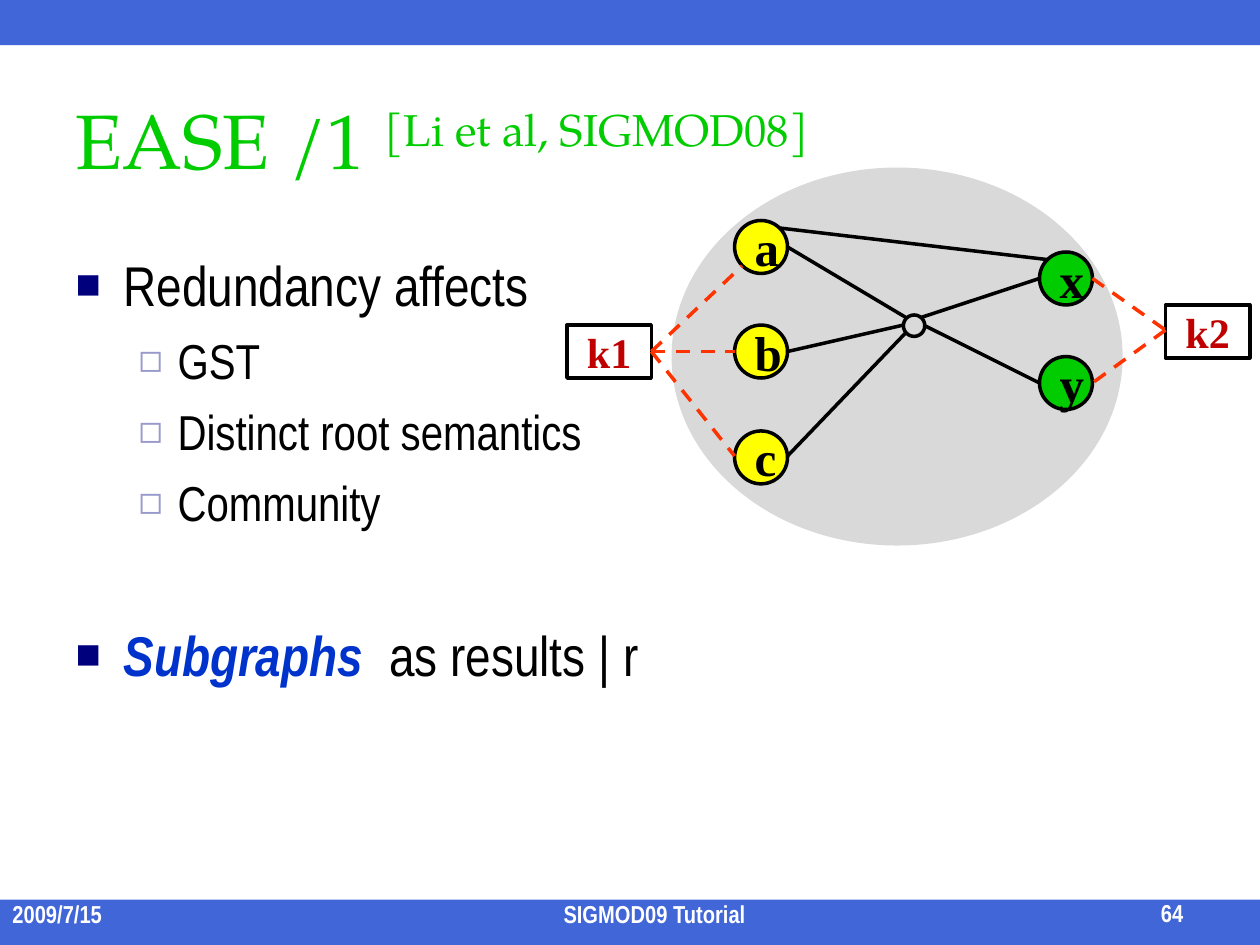
"""Build the EASE slide with its keyword graph."""
from lxml.etree import SubElement as Sub
from pptx import Presentation
from pptx.dml.color import RGBColor as RGB
from pptx.enum.dml import MSO_LINE as Dash
from pptx.enum.shapes import MSO_CONNECTOR as Link, MSO_SHAPE as Kind
from pptx.enum.text import MSO_ANCHOR as Anchor, MSO_AUTO_SIZE as Fit, PP_ALIGN as Align
from pptx.oxml.ns import qn
from pptx.util import Inches, Pt

BLUE = RGB(0x00, 0x33, 0xCC)
GREEN = RGB(0x00, 0xCC, 0x00)
YELLOW = RGB(0xFF, 0xFF, 0x00)
GRAY = RGB(0xD9, 0xD9, 0xD9)
NAVY = RGB(0x00, 0x00, 0x7D)
LILAC = RGB(0x99, 0x99, 0xCC)
RED = RGB(0xC0, 0x00, 0x00)
ORANGE = RGB(0xFF, 0x33, 0x00)
BLACK = RGB(0x00, 0x00, 0x00)
WHITE = RGB(0xFF, 0xFF, 0xFF)
SANS, SERIF, TITLE = "Arial Narrow", "Times New Roman", "TeX Gyre Pagella"

deck = Presentation()
deck.slide_width, deck.slide_height = Inches(10), Inches(7.5)
slide = deck.slides.add_slide(deck.slide_layouts[1])
shapes = slide.shapes


def write(para, text, size, face, color, bold=False):
    run = para.add_run()
    run.text = text
    font = run.font
    font.size, font.name, font.bold = Pt(size), face, bold
    font.color.rgb = color
    return run


def draw(kind, box, fill=None, line=None):
    shape = shapes.add_shape(kind, *map(Inches, box))
    shape.shadow.inherit = False
    if fill is None:
        shape.fill.background()
    else:
        shape.fill.solid()
        shape.fill.fore_color.rgb = fill
    if line is None:
        shape.line.fill.background()
    else:
        shape.line.color.rgb = line
        shape.line.width = Pt(2)
    return shape


for top in (7.14, 0):
    bar = draw(Kind.RECTANGLE, (0, top, 10, 0.36), BLUE)
    tint = bar.fill._xPr.find(".//" + qn("a:srgbClr"))
    Sub(tint, qn("a:alpha"), val="75000")

draw(Kind.OVAL, (5.33, 1.33, 3.58, 3), GRAY)

title, body = shapes.title, slide.placeholders[1]
for holder, box in ((title, (0.5, 0.5, 9, 1.2)), (body, (0.5, 1.94, 9, 5.12))):
    holder.left, holder.top, holder.width, holder.height = map(Inches, box)
    holder.text_frame.auto_size = Fit.NONE
    shapes._spTree.append(holder._element)

title.text_frame.vertical_anchor = Anchor.MIDDLE
head = title.text_frame.paragraphs[0]
head.alignment = Align.LEFT
write(head, "EASE /1 ", 44, TITLE, GREEN)
cite = write(head, "[Li et al, SIGMOD08]", 44, TITLE, GREEN)
cite._r.get_or_add_rPr().set("baseline", "30000")

levels = [
    (32, 0.38, 0.38, "■", NAVY, 75),
    (28, 0.81, 0.31, "◻", LILAC, 80),
]
items = [
    (0, 7, "", "Redundancy affects"),
    (1, 7, "", "GST"),
    (1, 7, "", "Distinct root semantics"),
    (1, 7, "", "Community"),
    (0, 51, "Subgraphs ", " as results | r"),
]
frame = body.text_frame
for i, (level, gap, term, text) in enumerate(items):
    size, left, hang, mark, color, scale = levels[level]
    para = frame.add_paragraph() if i else frame.paragraphs[0]
    para.level = level
    para.space_before = Pt(gap)
    props = para._p.get_or_add_pPr()
    props.set("marL", str(Inches(left)))
    props.set("indent", str(-Inches(hang)))
    Sub(Sub(props, qn("a:buClr")), qn("a:srgbClr"), val=str(color))
    Sub(props, qn("a:buSzPct"), val=str(scale * 1000))
    Sub(props, qn("a:buChar"), char=mark)
    if term:
        write(para, term, size, SANS, BLUE, True).font.italic = True
    write(para, text, size, SANS, BLACK)

for text, box, align in (
    ("SIGMOD09 Tutorial", (2.32, 7.18, 5.75, 0.24), Align.CENTER),
    ("64", (8.23, 7.17, 1.26, 0.24), Align.RIGHT),
    ("2009/7/15", (0, 7.18, 2.09, 0.24), Align.LEFT),
):
    frame = shapes.add_textbox(*map(Inches, box)).text_frame
    frame.word_wrap = True
    frame.vertical_anchor = Anchor.BOTTOM
    frame.paragraphs[0].alignment = align
    write(frame.paragraphs[0], text, 14, SANS, WHITE, True)

draw(Kind.OVAL, (7.17, 2.5, 0.17, 0.17), line=BLACK)
for name, kind, left, top, width, fill, size, ink in (
    ("a", Kind.OVAL, 5.83, 1.75, 0.42, YELLOW, 28, BLACK),
    ("b", Kind.OVAL, 5.83, 2.58, 0.42, YELLOW, 28, BLACK),
    ("c", Kind.OVAL, 5.83, 3.42, 0.42, YELLOW, 28, BLACK),
    ("x", Kind.OVAL, 8.25, 2, 0.42, GREEN, 28, BLACK),
    ("y", Kind.OVAL, 8.25, 2.83, 0.42, GREEN, 28, BLACK),
    ("k1", Kind.RECTANGLE, 4.5, 2.58, 0.67, None, 24, RED),
    ("k2", Kind.RECTANGLE, 9.25, 2.42, 0.67, None, 24, RED),
):
    node = draw(kind, (left, top, width, 0.42), fill, BLACK)
    frame = node.text_frame
    frame.vertical_anchor = Anchor.MIDDLE
    frame.paragraphs[0].alignment = Align.CENTER
    write(frame.paragraphs[0], name, size, SERIF, ink, True)

edges = [
    (6.25, 2.79, 7.17, 2.58),
    (7.33, 2.58, 8.25, 3.04),
    (6.25, 1.96, 7.19, 2.52),
    (6.25, 3.62, 7.19, 2.64),
    (7.31, 2.52, 8.25, 2.21),
    (8.31, 2.06, 6.19, 1.81),
]
hits = [
    (5.17, 2.79, 5.89, 2.11),
    (5.17, 2.79, 5.83, 2.79),
    (5.17, 2.79, 5.83, 3.62),
    (8.67, 2.21, 9.25, 2.62),
    (9.25, 2.62, 8.67, 3.04),
]
for group, color, dash in ((edges, BLACK, None), (hits, ORANGE, Dash.DASH)):
    for ends in group:
        link = shapes.add_connector(Link.STRAIGHT, *map(Inches, ends))
        link.line.color.rgb = color
        link.line.width = Pt(2)
        link.line.dash_style = dash
        Sub(link._element.spPr, qn("a:effectLst"))

deck.save("out.pptx")
